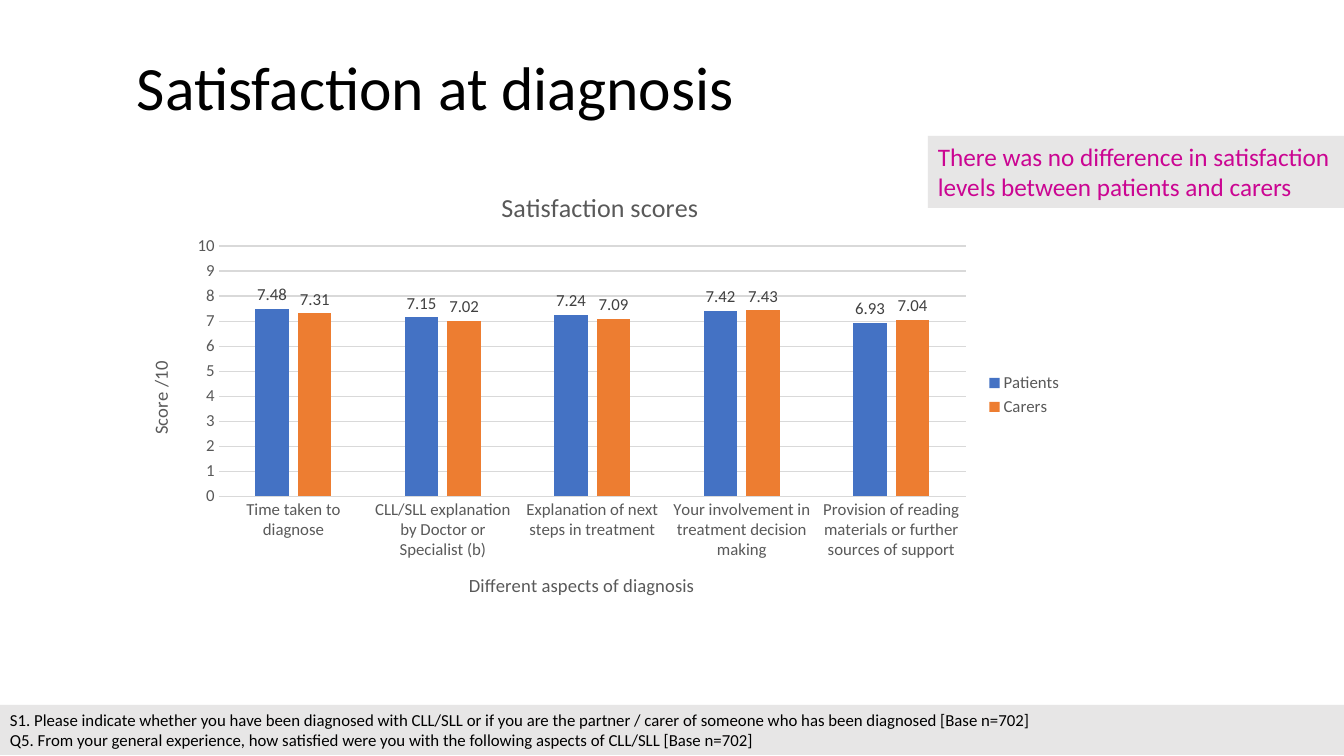
from pptx import Presentation, util as u
from pptx.chart.data import CategoryChartData
from pptx.dml.color import RGBColor
from pptx.enum import chart as charts, shapes, text
from pptx.oxml import parse_xml
from pptx.oxml.ns import nsdecls, qn

PX_PER_INCH = 100.8
COLORS = {
    "black": "000000", "panel": "E7E6E6", "accent": "CB0592",
    "axis": "595959", "label": "404040", "grid": "D9D9D9",
    "patients": "4472C4", "carers": "ED7D31",
}


def px(length):
    return u.Inches(length / PX_PER_INCH)


def color(name):
    return RGBColor.from_string(COLORS[name])


def format_font(font, size, ink):
    font.name = "Calibri"
    font.size = u.Pt(size)
    font.bold = False
    font.color.rgb = color(ink)


def write(frame, words, size=12, ink="black", spacing=None, anchor=text.MSO_ANCHOR.TOP):
    """Fill a text frame, one paragraph per line of words."""
    frame.text = words
    frame.word_wrap = True
    frame.vertical_anchor = anchor
    for para in frame.paragraphs:
        para.alignment = text.PP_ALIGN.LEFT
        para.line_spacing = spacing
        for span in para.runs:
            format_font(span.font, size, ink)


class SlideBuilder:
    def __init__(self, slide):
        self.slide = slide

    def title(self, words, left, top, width, height):
        box = self.slide.shapes.add_textbox(*map(px, (left, top, width, height)))
        write(box.text_frame, words, size=44, spacing=0.9, anchor=text.MSO_ANCHOR.MIDDLE)

    def panel(self, words, left, top, width, height, **style):
        box = self.slide.shapes.add_shape(
            shapes.MSO_SHAPE.RECTANGLE, *map(px, (left, top, width, height)))
        box.shadow.inherit = False
        box.fill.solid()
        box.fill.fore_color.rgb = color("panel")
        box.line.fill.background()
        write(box.text_frame, words, **style)
        box.text_frame.auto_size = text.MSO_AUTO_SIZE.SHAPE_TO_FIT_TEXT

    def column_chart(self, title, categories, series, left, top, width, height, plot_area):
        data = CategoryChartData(number_format="General")
        data.categories = categories
        for name, values, _ in series:
            data.add_series(name, values)
        chart = self.slide.shapes.add_chart(
            charts.XL_CHART_TYPE.COLUMN_CLUSTERED,
            *map(px, (left, top, width, height)), data).chart
        format_font(chart.font, 10, "black")
        self.heading(chart, title, 18.6)

        # Legend
        chart.has_legend = True
        chart.legend.position = charts.XL_LEGEND_POSITION.RIGHT
        chart.legend.include_in_layout = False
        format_font(chart.legend.font, 12, "axis")

        # Columns and their values
        plot = chart.plots[0]
        plot.gap_width, plot.overlap, plot.vary_by_categories = 219, -27, False
        for columns, (_, _, fill) in zip(plot.series, series):
            columns.format.fill.solid()
            columns.format.fill.fore_color.rgb = color(fill)
            labels = columns.data_labels
            labels.show_value = True
            labels.position = charts.XL_LABEL_POSITION.OUTSIDE_END
            format_font(labels.font, 12, "label")

        # Plot area, as shares of the chart
        plot_left, plot_top, plot_width, plot_height = plot_area
        shares = {"x": (plot_left - left) / width, "y": (plot_top - top) / height,
                  "w": plot_width / width, "h": plot_height / height}
        layout = "".join(f'<c:{key} val="{share:.3f}"/>' for key, share in shares.items())
        area = chart.element.find(".//" + qn("c:plotArea"))
        for old in area.findall(qn("c:layout")):
            area.remove(old)
        area.insert(0, parse_xml(
            f'<c:layout {nsdecls("c")}><c:manualLayout><c:layoutTarget val="inner"/>'
            f'<c:xMode val="edge"/><c:yMode val="edge"/>{layout}</c:manualLayout></c:layout>'))
        return chart

    def heading(self, owner, words, size):
        """Title a chart or an axis."""
        owner.has_title = True
        title = owner.chart_title if hasattr(owner, "chart_title") else owner.axis_title
        title.text_frame.text = words
        format_font(title.text_frame.paragraphs[0].runs[0].font, size, "axis")

    def axis(self, axis, title):
        self.heading(axis, title, 13.3)
        axis.major_tick_mark = axis.minor_tick_mark = charts.XL_TICK_MARK.NONE
        format_font(axis.tick_labels.font, 12, "axis")

    def line(self, line):
        line.color.rgb = color("grid")
        line.width = u.Pt(0.75)


def main():
    deck = Presentation()
    deck.slide_width, deck.slide_height = px(1344), px(756)
    page = SlideBuilder(deck.slides.add_slide(deck.slide_layouts[6]))

    # Survey questions
    page.panel(
        "S1. Please indicate whether you have been diagnosed with CLL/SLL or if you are "
        "the partner / carer of someone who has been diagnosed [Base n=702]\n"
        "Q5. From your general experience, how satisfied were you with the following "
        "aspects of CLL/SLL [Base n=702]",
        0, 705, 1344, 50)

    # Title and key message
    page.title("Satisfaction at diagnosis", 127, 18, 1159, 146)
    page.panel("There was no difference in satisfaction levels between patients and carers",
               928, 136, 416, 72, size=18, ink="accent")

    # Scores
    chart = page.column_chart(
        "Satisfaction scores",
        ["Time taken to diagnose",
         "CLL/SLL explanation by Doctor or Specialist (b)",
         "Explanation of next steps in treatment",
         "Your involvement in treatment decision making",
         "Provision of reading materials or further sources of support"],
        [("Patients", (7.48, 7.15, 7.24, 7.42, 6.93), "patients"),
         ("Carers", (7.31, 7.02, 7.09, 7.43, 7.04), "carers")],
        127, 170, 946, 450, plot_area=(219, 246, 747, 250))
    page.axis(chart.category_axis, "Different aspects of diagnosis")
    page.line(chart.category_axis.format.line)
    scores = chart.value_axis
    page.axis(scores, "Score /10")
    scores.minimum_scale, scores.maximum_scale, scores.major_unit = 0, 10, 1
    scores.format.line.fill.background()
    page.line(scores.major_gridlines.format.line)

    deck.save("out.pptx")


if __name__ == "__main__":
    main()
